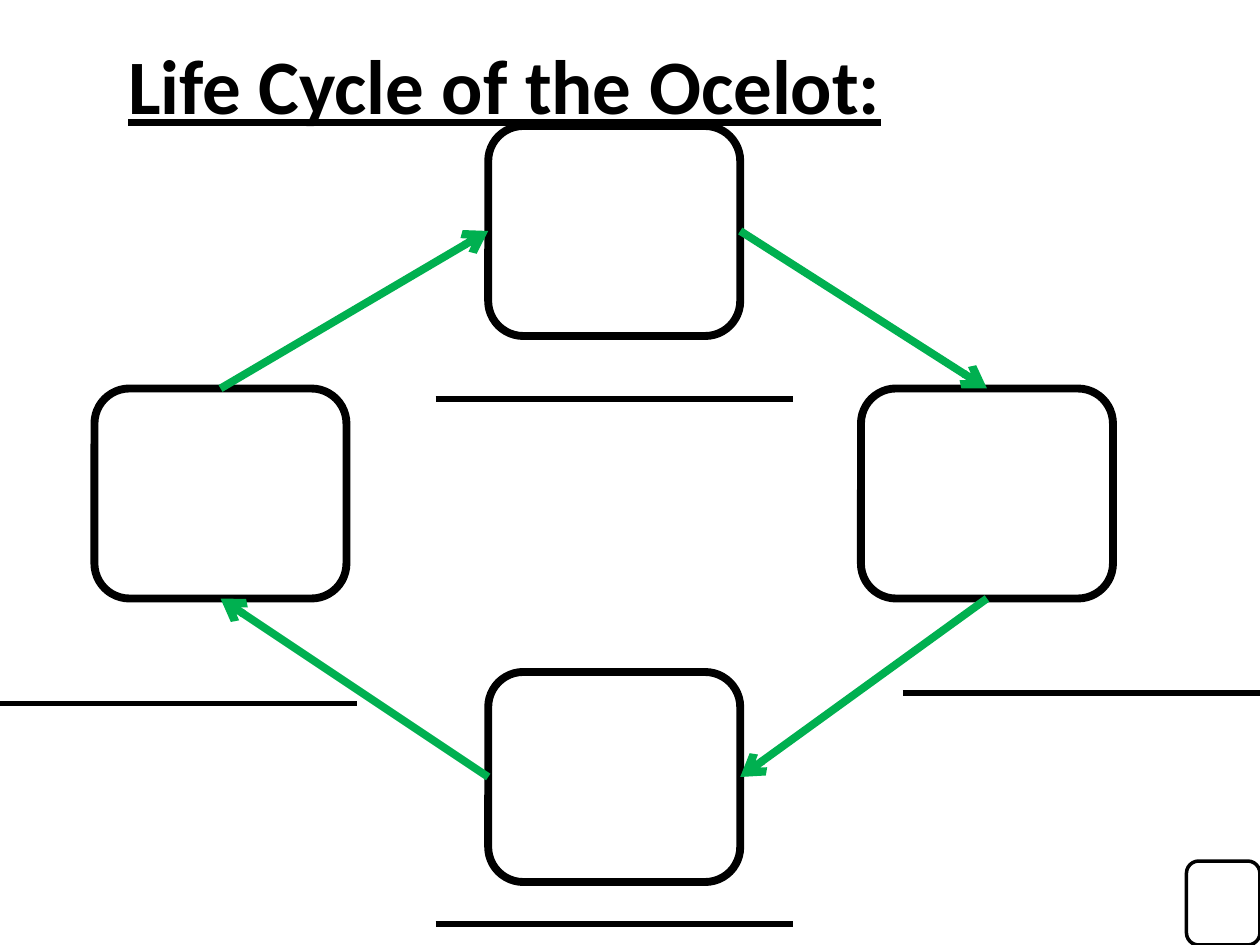
from lxml.etree import SubElement
from pptx import Presentation
from pptx.dml.color import RGBColor
from pptx.enum.shapes import MSO_CONNECTOR as CONNECTOR, MSO_SHAPE as SHAPE
from pptx.enum.text import MSO_ANCHOR as ANCHOR, MSO_AUTO_SIZE as AUTO_SIZE, PP_ALIGN as ALIGN
from pptx.oxml.ns import qn
from pptx.util import Pt

PX = 7620  # EMU per px, 120 px to the inch
BLACK, WHITE, GREEN = "000000", "FFFFFF", "00B050"
STAGE_W, STAGE_H = 240, 200
LABEL_W = 340
TOP, LEFT, BOTTOM, RIGHT = range(4)  # connection sites of a rounded box


def px(*lengths):
    return [length * PX for length in lengths]


def color(hex_code):
    return RGBColor.from_string(hex_code)


def add_title(slide, box, wording):
    title = slide.shapes.title
    title.left, title.top, title.width, title.height = px(*box)
    frame = title.text_frame
    frame.text = wording
    frame.auto_size = AUTO_SIZE.NONE
    frame.word_wrap = True
    frame.vertical_anchor = ANCHOR.TOP
    heading = frame.paragraphs[0]
    heading.alignment = ALIGN.LEFT
    font = heading.runs[0].font
    font.name, font.size = "Calibri", Pt(44)
    font.bold = font.underline = True
    font.color.rgb = color(BLACK)


def add_frame(slide, box, weight):
    frame = slide.shapes.add_shape(SHAPE.ROUNDED_RECTANGLE, *px(*box))
    frame.shadow.inherit = False
    frame.fill.solid()
    frame.fill.fore_color.rgb = color(WHITE)
    frame.line.color.rgb = color(BLACK)
    frame.line.width = Pt(weight)
    return frame


def add_line(slide, start, end, hex_code, weight):
    line = slide.shapes.add_connector(CONNECTOR.STRAIGHT, *px(*start, *end))
    line.line.color.rgb = color(hex_code)
    line.line.width = Pt(weight)
    SubElement(line._element.spPr, qn("a:effectLst"))
    return line


def add_arrow(slide, source, source_site, target, target_site):
    arrow = add_line(slide, (0, 0), (0, 0), GREEN, 4.5)
    arrow.begin_connect(source, source_site)
    arrow.end_connect(target, target_site)
    SubElement(arrow.line._get_or_add_ln(), qn("a:tailEnd"), type="arrow")


def add_cycle(slide, box):
    left, top, width, height = box
    middle_x = left + (width - STAGE_W) // 2 + 10
    middle_y = top + (height - STAGE_H) // 2 - 10

    # Stages, clockwise from the top
    corners = [
        (middle_x, top),
        (left + width - STAGE_W, middle_y),
        (middle_x, top + height - STAGE_H),
        (left, middle_y),
    ]
    north, east, south, west = [
        add_frame(slide, (*corner, STAGE_W, STAGE_H), 4.5) for corner in corners
    ]

    # Arrows from each stage to the next
    add_arrow(slide, north, RIGHT, east, TOP)
    add_arrow(slide, east, BOTTOM, south, RIGHT)
    add_arrow(slide, south, LEFT, west, BOTTOM)
    add_arrow(slide, west, TOP, north, LEFT)

    # Blank label line below each stage
    label_offsets = [(-50, 260), (40, 290), (-50, 240), (-90, 300)]
    for (x, y), (dx, dy) in zip(corners, label_offsets):
        start = (x + dx, y + dy)
        add_line(slide, start, (start[0] + LABEL_W, start[1]), BLACK, 3)


def main():
    deck = Presentation()
    deck.slide_width, deck.slide_height = px(1200, 900)
    slide = deck.slides.add_slide(deck.slide_layouts[5])

    add_title(slide, (110, 30, 978, 102), "Life Cycle of the Ocelot:")
    add_cycle(slide, (90, 120, 970, 720))
    # Small box in the bottom right corner
    add_frame(slide, (1130, 820, 70, 80), 2)

    deck.save("out.pptx")


if __name__ == "__main__":
    main()
